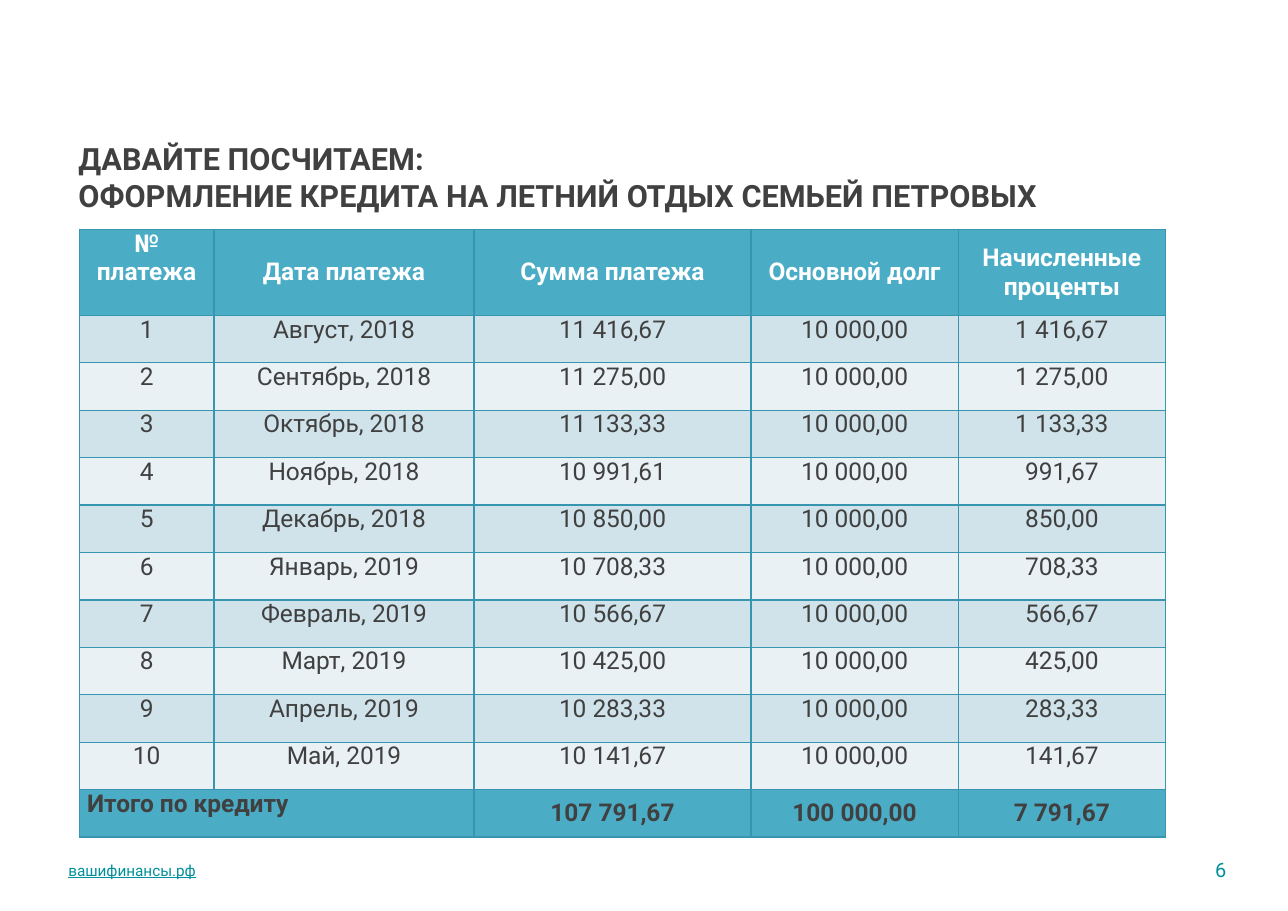
"""Build the slide with the loan payment schedule of the Petrov family."""
import pptx
import pptx.dml.color
import pptx.enum.text
import pptx.oxml.ns
import pptx.util
from lxml import etree

Inches = pptx.util.Inches
Align = pptx.enum.text.PP_ALIGN
Anchor = pptx.enum.text.MSO_ANCHOR

FONT = "Roboto"
COLORS = {
    "text": "404040",
    "white": "FFFFFF",
    "accent": "00909B",
    "header": "4BACC6",
    "odd": "D0E3EA",
    "even": "E9F1F5",
    "border": "3795AF",
}
COLUMN_WIDTHS = [1.22, 2.36, 2.51, 1.88, 1.88]
HEADER_HEIGHT, ROW_HEIGHT = 0.78, 0.43
HEADERS = ["№ платежа", "Дата платежа", "Сумма платежа", "Основной долг", "Начисленные проценты"]
PRINCIPAL = "10 000,00"
PAYMENTS = [
    ("Август, 2018", "11 416,67", "1 416,67"),
    ("Сентябрь, 2018", "11 275,00", "1 275,00"),
    ("Октябрь, 2018", "11 133,33", "1 133,33"),
    ("Ноябрь, 2018", "10 991,61", "991,67"),
    ("Декабрь, 2018", "10 850,00", "850,00"),
    ("Январь, 2019", "10 708,33", "708,33"),
    ("Февраль, 2019", "10 566,67", "566,67"),
    ("Март, 2019", "10 425,00", "425,00"),
    ("Апрель, 2019", "10 283,33", "283,33"),
    ("Май, 2019", "10 141,67", "141,67"),
]
TOTALS = ["Итого по кредиту", "", "107 791,67", "100 000,00", "7 791,67"]


def rgb(name):
    """Return the named colour."""
    return pptx.dml.color.RGBColor.from_string(COLORS[name])


def format_text(text_frame, size, color, bold=False, align=Align.LEFT):
    """Format every run of a text frame."""
    for paragraph in text_frame.paragraphs:
        paragraph.alignment = align
        for run in paragraph.runs:
            run.font.name = FONT
            run.font.size = pptx.util.Pt(size)
            run.font.bold = bold
            run.font.color.rgb = rgb(color)


def add_text(slide, text, box, size, color, bold=False, align=Align.LEFT,
             anchor=Anchor.MIDDLE, left_inset=0.05):
    """Add a text box and return its text frame."""
    text_frame = slide.shapes.add_textbox(*map(Inches, box)).text_frame
    text_frame.word_wrap = True
    text_frame.vertical_anchor = anchor
    text_frame.margin_left = Inches(left_inset)
    text_frame.margin_right = text_frame.margin_top = text_frame.margin_bottom = Inches(0.05)
    text_frame.text = text
    format_text(text_frame, size, color, bold, align)
    return text_frame


def add_borders(cell):
    """Draw a thin line on all four sides of a cell."""
    qn = pptx.oxml.ns.qn
    properties = cell._tc.get_or_add_tcPr()
    for side in ("a:lnL", "a:lnR", "a:lnT", "a:lnB"):
        line = etree.SubElement(properties, qn(side), w=str(pptx.util.Pt(1)))
        fill = etree.SubElement(line, qn("a:solidFill"))
        etree.SubElement(fill, qn("a:srgbClr"), val=COLORS["border"])


def fill_cell(cell, text, fill, color, bold, align, anchor):
    """Set the text, borders and fill of a table cell."""
    cell.margin_left = cell.margin_right = Inches(0.07)
    cell.margin_top = cell.margin_bottom = 0
    cell.vertical_anchor = anchor
    add_borders(cell)
    cell.fill.solid()
    cell.fill.fore_color.rgb = rgb(fill)
    cell.text = text
    format_text(cell.text_frame, 16, color, bold, align)


def add_schedule(slide):
    """Add the payment table with its header and total rows."""
    body = [[str(number), date, payment, PRINCIPAL, interest]
            for number, (date, payment, interest) in enumerate(PAYMENTS, 1)]
    rows = [HEADERS, *body, TOTALS]
    last = len(rows) - 1
    height = HEADER_HEIGHT + ROW_HEIGHT * last
    table = slide.shapes.add_table(
        len(rows), len(HEADERS), Inches(0.72), Inches(2.08),
        Inches(sum(COLUMN_WIDTHS)), Inches(height)).table
    table.first_row = table.horz_banding = False
    for column, width in zip(table.columns, COLUMN_WIDTHS):
        column.width = Inches(width)
    for index, values in enumerate(rows):
        table.rows[index].height = Inches(ROW_HEIGHT if index else HEADER_HEIGHT)
        bold = index in (0, last)
        fill = "header" if bold else "odd" if index % 2 else "even"
        for position, text in enumerate(values):
            fill_cell(
                table.cell(index, position), text, fill,
                color="text" if index else "white", bold=bold,
                align=Align.LEFT if index == last and position == 0 else Align.CENTER,
                anchor=Anchor.MIDDLE if bold and position else Anchor.TOP)
    table.cell(last, 0).merge(table.cell(last, 1))


def main():
    """Build and save the slide."""
    presentation = pptx.Presentation()
    presentation.slide_width = Inches(11.68)
    presentation.slide_height = Inches(8.26)
    slide = presentation.slides.add_slide(presentation.slide_layouts[6])
    site = add_text(slide, "вашифинансы.рф", (0.57, 7.75, 3.97, 0.28), 10, "accent")
    site.paragraphs[0].runs[0].font.underline = True
    add_text(slide, "ДАВАЙТЕ ПОСЧИТАЕМ:\vОФОРМЛЕНИЕ КРЕДИТА НА ЛЕТНИЙ ОТДЫХ СЕМЬЕЙ ПЕТРОВЫХ",
             (0.59, 1.22, 10.52, 0.79), 20, "text", bold=True,
             anchor=Anchor.TOP, left_inset=0.12)
    add_schedule(slide)
    add_text(slide, "6", (10.85, 7.72, 0.32, 0.33), 13, "accent", align=Align.RIGHT)
    presentation.save("out.pptx")


if __name__ == "__main__":
    main()
